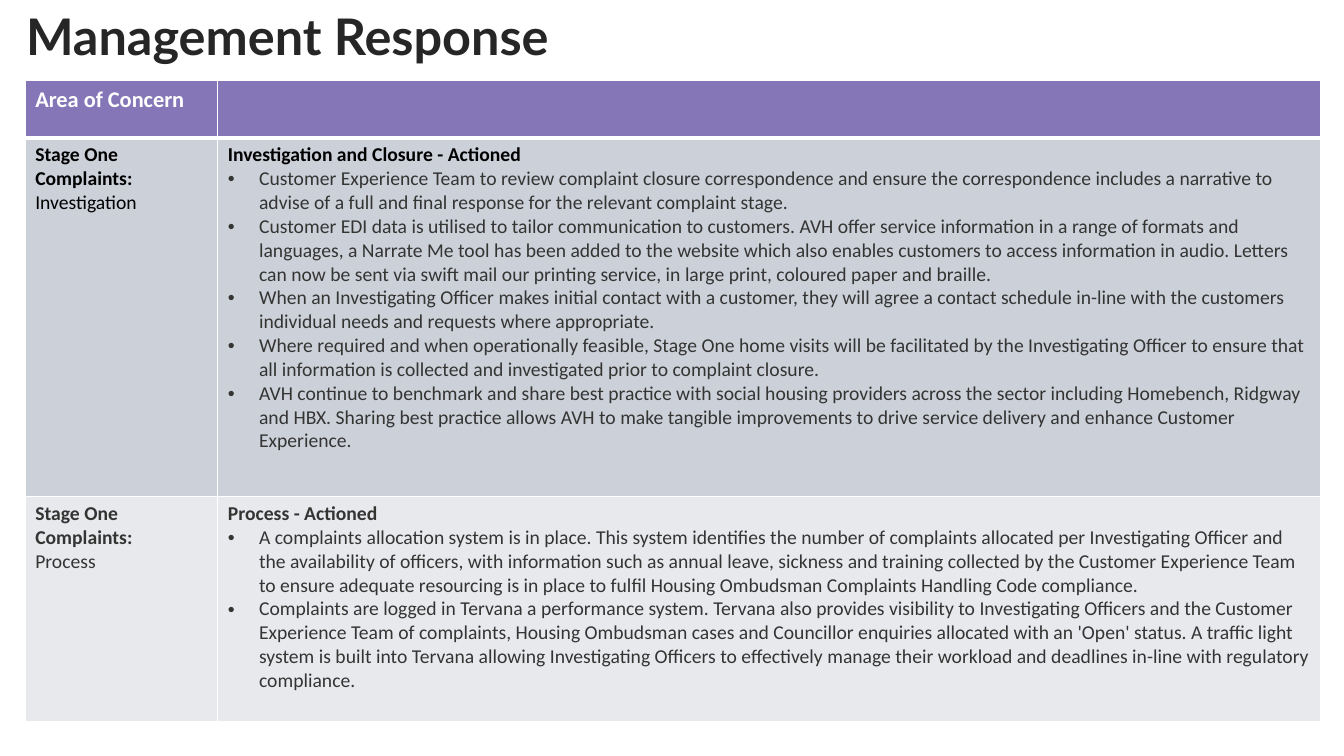
from dataclasses import dataclass

from lxml.etree import SubElement
from pptx import Presentation
from pptx.dml.color import RGBColor
from pptx.oxml import parse_xml
from pptx.oxml.ns import nsdecls, qn
from pptx.slide import Slide
from pptx.table import _Cell
from pptx.text.text import _Paragraph
from pptx.util import Inches, Pt

WHITE = "FFFFFF"
BLACK = "000000"
CHARCOAL = "343433"
TITLE_GREY = "262626"
PURPLE = "8577B7"
COLUMN_WIDTHS = (1.91, 10.94)
HEADER_HEIGHT = 0.57
BULLET_INDENT = Inches(0.31)


@dataclass(frozen=True)
class Concern:
    topic: str
    response: str
    actions: tuple[str, ...]
    heading_color: str
    fill: str
    height: float


CONCERNS = (
    Concern(
        "Investigation",
        "Investigation and Closure - Actioned",
        (
            "Customer Experience Team to review complaint closure correspondence and ensure the "
            "correspondence includes a narrative to advise of a full and final response for the "
            "relevant complaint stage.",
            "Customer EDI data is utilised to tailor communication to customers. AVH offer service "
            "information in a range of formats and languages, a Narrate Me tool has been added to the "
            "website which also enables customers to access information in audio. Letters can now be "
            "sent via swift mail our printing service, in large print, coloured paper and braille.",
            "When an Investigating Officer makes initial contact with a customer, they will agree a "
            "contact schedule in-line with the customers individual needs and requests where appropriate.",
            "Where required and when operationally feasible, Stage One home visits will be facilitated "
            "by the Investigating Officer to ensure that all information is collected and investigated "
            "prior to complaint closure.",
            "AVH continue to benchmark and share best practice with social housing providers across the "
            "sector including Homebench, Ridgway and HBX. Sharing best practice allows AVH to make "
            "tangible improvements to drive service delivery and enhance Customer Experience.",
        ),
        BLACK,
        "CCD0D9",
        3.56,
    ),
    Concern(
        "Process",
        "Process - Actioned",
        (
            "A complaints allocation system is in place. This system identifies the number of complaints "
            "allocated per Investigating Officer and the availability of officers, with information such "
            "as annual leave, sickness and training collected by the Customer Experience Team to ensure "
            "adequate resourcing is in place to fulfil Housing Ombudsman Complaints Handling Code "
            "compliance.",
            "Complaints are logged in Tervana a performance system. Tervana also provides visibility to "
            "Investigating Officers and the Customer Experience Team of complaints, Housing Ombudsman "
            "cases and Councillor enquiries allocated with an 'Open' status. A traffic light system is "
            "built into Tervana allowing Investigating Officers to effectively manage their workload and "
            "deadlines in-line with regulatory compliance.",
        ),
        CHARCOAL,
        "E7E9ED",
        2.23,
    ),
)


def rgb(value: str) -> RGBColor:
    return RGBColor.from_string(value)


def add_run(paragraph: _Paragraph, text: str, size: float, color: str,
            bold: bool = False, font: str = "Calibri") -> None:
    run = paragraph.add_run()
    run.text = text
    run.font.name = font
    run.font.size = Pt(size)
    run.font.bold = bold
    run.font.color.rgb = rgb(color)


def add_bullet(paragraph: _Paragraph) -> None:
    properties = paragraph._p.get_or_add_pPr()
    properties.set("marL", str(BULLET_INDENT))
    properties.set("indent", str(-BULLET_INDENT))
    SubElement(properties, qn("a:buFont"), typeface="Arial")
    SubElement(properties, qn("a:buChar"), char="•")


def style_cell(cell: _Cell, fill: str, top: float = 1, bottom: float = 1) -> None:
    cell.fill.solid()
    cell.fill.fore_color.rgb = rgb(fill)
    borders = {"lnL": 1, "lnR": 1, "lnT": top, "lnB": bottom}
    for position, (side, width) in enumerate(borders.items()):
        border = parse_xml(
            f'<a:{side} {nsdecls("a")} w="{Pt(width)}"><a:solidFill>'
            f'<a:srgbClr val="{WHITE}"/></a:solidFill></a:{side}>'
        )
        cell._tc.get_or_add_tcPr().insert(position, border)


def add_title(slide: Slide) -> None:
    title = slide.shapes.add_textbox(Inches(0.16), Inches(0), Inches(11.81), Inches(0.71))
    title.text_frame.word_wrap = True
    add_run(title.text_frame.paragraphs[0], "Management Response", 36, TITLE_GREY, True, "Lato")


def fill_concern(area: _Cell, response: _Cell, concern: Concern) -> None:
    heading = concern.heading_color
    add_run(area.text_frame.paragraphs[0], "Stage One Complaints:", 14, heading, True)
    add_run(area.text_frame.add_paragraph(), concern.topic, 14, heading)
    add_run(response.text_frame.paragraphs[0], concern.response, 14, heading, True)
    for action in concern.actions:
        paragraph = response.text_frame.add_paragraph()
        add_bullet(paragraph)
        add_run(paragraph, action, 14, CHARCOAL)


def add_response_table(slide: Slide) -> None:
    heights = [HEADER_HEIGHT, *(concern.height for concern in CONCERNS)]
    table = slide.shapes.add_table(
        len(heights), len(COLUMN_WIDTHS), Inches(0.25), Inches(0.8),
        Inches(sum(COLUMN_WIDTHS)), Inches(sum(heights)),
    ).table
    for column, width in zip(table.columns, COLUMN_WIDTHS):
        column.width = Inches(width)
    for row, height in zip(table.rows, heights):
        row.height = Inches(height)

    for header in table.rows[0].cells:
        style_cell(header, PURPLE, bottom=3)
    add_run(table.cell(0, 0).text_frame.paragraphs[0], "Area of Concern", 16, WHITE, True)

    for index, concern in enumerate(CONCERNS, start=1):
        area, response = table.rows[index].cells
        for cell in (area, response):
            style_cell(cell, concern.fill, top=3 if index == 1 else 1)
        fill_concern(area, response, concern)


def main() -> None:
    presentation = Presentation()
    presentation.slide_width = Inches(13.33)
    presentation.slide_height = Inches(7.5)
    slide = presentation.slides.add_slide(presentation.slide_layouts[6])
    add_response_table(slide)
    add_title(slide)
    presentation.save("out.pptx")


if __name__ == "__main__":
    main()
